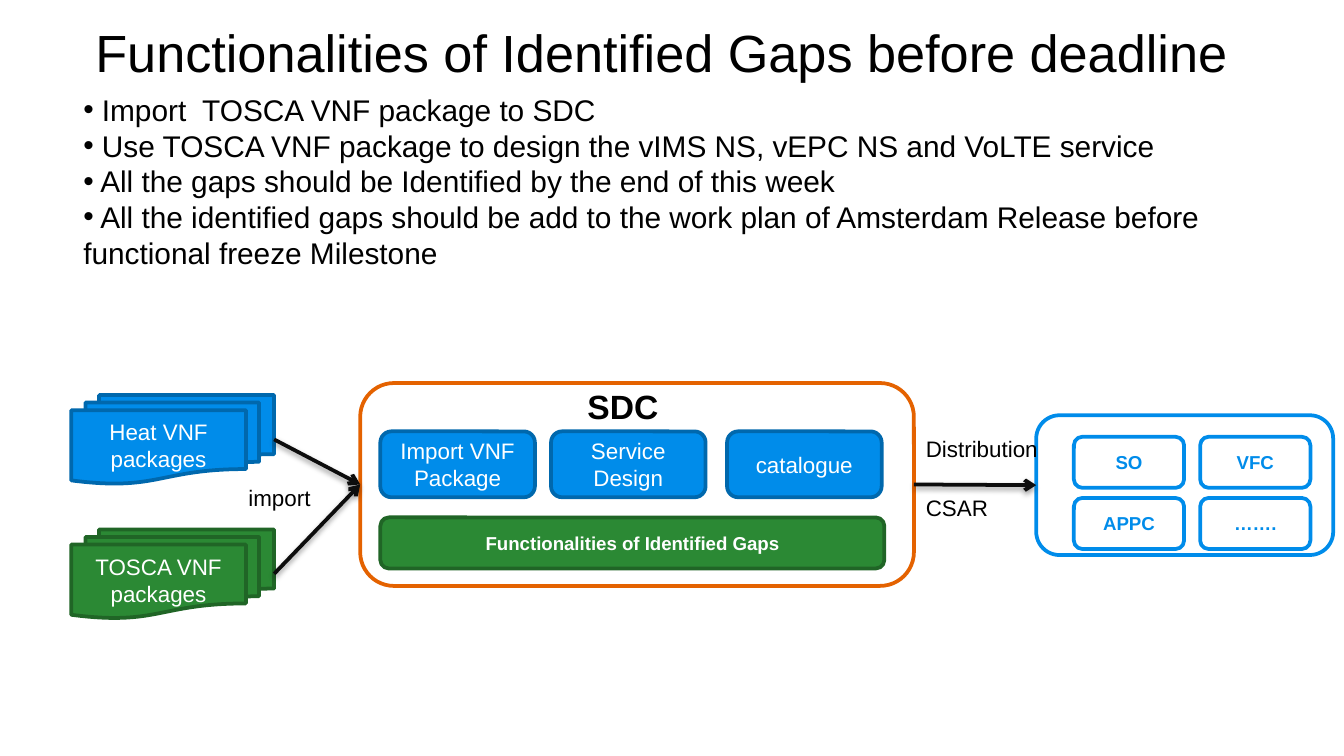
from dataclasses import dataclass

from lxml.etree import SubElement
from pptx import Presentation
from pptx.dml.color import RGBColor
from pptx.enum.shapes import MSO_CONNECTOR, MSO_SHAPE
from pptx.enum.text import MSO_ANCHOR, MSO_AUTO_SIZE, PP_ALIGN
from pptx.oxml import parse_xml
from pptx.oxml.ns import nsdecls, qn
from pptx.util import Inches, Pt


@dataclass(frozen=True)
class Theme:
    font: str = "Arial"
    black: str = "000000"
    white: str = "FFFFFF"
    arrow: str = "0D0D0D"
    blue: str = "008CEA"
    dark_blue: str = "0068AD"
    green: str = "2B8934"
    dark_green: str = "206526"
    orange: str = "E46200"
    title: int = 28
    heading: int = 18
    body: int = 16
    label: int = 12
    small: int = 10
    line: int = 2


theme = Theme()
deck = Presentation()
deck.slide_width = Inches(10)
deck.slide_height = deck.slide_width * 9 // 16
page = deck.slides.add_slide(deck.slide_layouts[1])
cell = deck.slide_width // 100  # square grid, 100 columns across the slide


def write(box, text, size, color, align=PP_ALIGN.LEFT, anchor=MSO_ANCHOR.TOP, bold=False):
    frame = box.text_frame
    frame.text = text
    frame.word_wrap = True
    frame.auto_size = MSO_AUTO_SIZE.NONE
    frame.vertical_anchor = anchor
    for para in frame.paragraphs:
        para.alignment = align
        for span in para.runs:
            span.font.name = theme.font
            span.font.size = Pt(size)
            span.font.bold = bold
            span.font.color.rgb = RGBColor.from_string(color)


def draw(kind, place, fill, line, text="", size=theme.label, color=theme.white, bold=False):
    """Add a filled, outlined shape at a grid place, with centred text if any."""
    shape = page.shapes.add_shape(kind, *(int(n * cell) for n in place))
    shape.shadow.inherit = False
    shape.fill.solid()
    shape.fill.fore_color.rgb = RGBColor.from_string(fill)
    shape.line.color.rgb = RGBColor.from_string(line)
    shape.line.width = Pt(theme.line)
    if text:
        write(shape, text, size, color, PP_ALIGN.CENTER, MSO_ANCHOR.MIDDLE, bold)
    return shape


# Title and bullet list
title, body = page.shapes.title, page.placeholders[1]
for holder, place in ((title, (6.1, 1, 91.9, 5.7)), (body, (5.2, 6.3, 92.3, 14.5))):
    holder.left, holder.top, holder.width, holder.height = (int(n * cell) for n in place)
write(title, "Functionalities of Identified Gaps before deadline", theme.title, theme.black)

points = (
    " Import  TOSCA VNF package to SDC",
    " Use TOSCA VNF package to design the vIMS NS, vEPC NS and VoLTE service",
    " All the gaps should be Identified by the end of this week",
    " All the identified gaps should be add to the work plan of Amsterdam Release "
    "before functional freeze Milestone",
)
write(body, "\n".join(points), theme.body, theme.black)
for para in body.text_frame.paragraphs:
    para.space_before = Pt(0)
    props = para._p.get_or_add_pPr()
    props.set("marL", "0")
    props.set("indent", "0")
    SubElement(props, qn("a:buFont"), typeface=theme.font)
    SubElement(props, qn("a:buChar"), char="•")

# Package stacks
round_rect = MSO_SHAPE.ROUNDED_RECTANGLE
stacks = [
    draw(MSO_SHAPE.FLOWCHART_MULTIDOCUMENT, (5.3, top, 15.1, 6.6), fill, line, text)
    for top, fill, line, text in (
        (29.4, theme.blue, theme.dark_blue, "Heat VNF packages"),
        (39.4, theme.green, theme.dark_green, "TOSCA VNF packages"),
    )
]

# SDC panel
sdc = draw(round_rect, (26.8, 28.5, 41.2, 15.1), theme.white, theme.orange)
for left, text in ((28.3, "Import VNF Package"), (41, "Service Design"), (54.1, "catalogue")):
    draw(round_rect, (left, 32.1, 11.5, 4.9), theme.blue, theme.dark_blue, text)
draw(round_rect, (28.3, 38.5, 37.5, 3.8), theme.green, theme.dark_green,
     "Functionalities of Identified Gaps", theme.small, bold=True)

# Panel of receiving modules, two by two
receivers = draw(round_rect, (77.1, 30.9, 22.1, 10.4), theme.white, theme.blue)
for index, text in enumerate(("SO", "VFC", "APPC", "…….")):
    row, column = divmod(index, 2)
    draw(round_rect, (79.9 + 9.4 * column, 32.5 + 4.55 * row, 8.2, 3.8),
         theme.white, theme.blue, text, theme.small, theme.blue, True)

# Arrows from right side to left side, with a soft shadow
for source, target in ((stacks[0], sdc), (stacks[1], sdc), (sdc, receivers)):
    arrow = page.shapes.add_connector(MSO_CONNECTOR.STRAIGHT, 0, 0, 0, 0)
    arrow.begin_connect(source, 3)
    arrow.end_connect(target, 1)
    arrow.line.color.rgb = RGBColor.from_string(theme.arrow)
    arrow.line.width = Pt(theme.line)
    SubElement(arrow.line._get_or_add_ln(), qn("a:tailEnd"), type="arrow")
    arrow._element.spPr.append(parse_xml(
        f'<a:effectLst {nsdecls("a")}>'
        f'<a:outerShdw blurRad="{Pt(3.1)}" dist="{Pt(1.6)}" dir="5400000" rotWithShape="0">'
        f'<a:srgbClr val="{theme.black}"><a:alpha val="38000"/></a:srgbClr>'
        '</a:outerShdw></a:effectLst>'))

# Free labels
for text, place, size, align, bold in (
    ("SDC", (37.2, 28.2, 18.3, 4), theme.heading, PP_ALIGN.CENTER, True),
    ("import", (17.5, 35.5, 19.6, 3), theme.label, PP_ALIGN.LEFT, False),
    ("Distribution", (67.9, 31.9, 15.8, 3), theme.label, PP_ALIGN.LEFT, False),
    ("CSAR", (67.9, 36.3, 15.8, 3), theme.label, PP_ALIGN.LEFT, False),
):
    box = page.shapes.add_textbox(*(int(n * cell) for n in place))
    write(box, text, size, theme.black, align, bold=bold)

deck.save("out.pptx")
